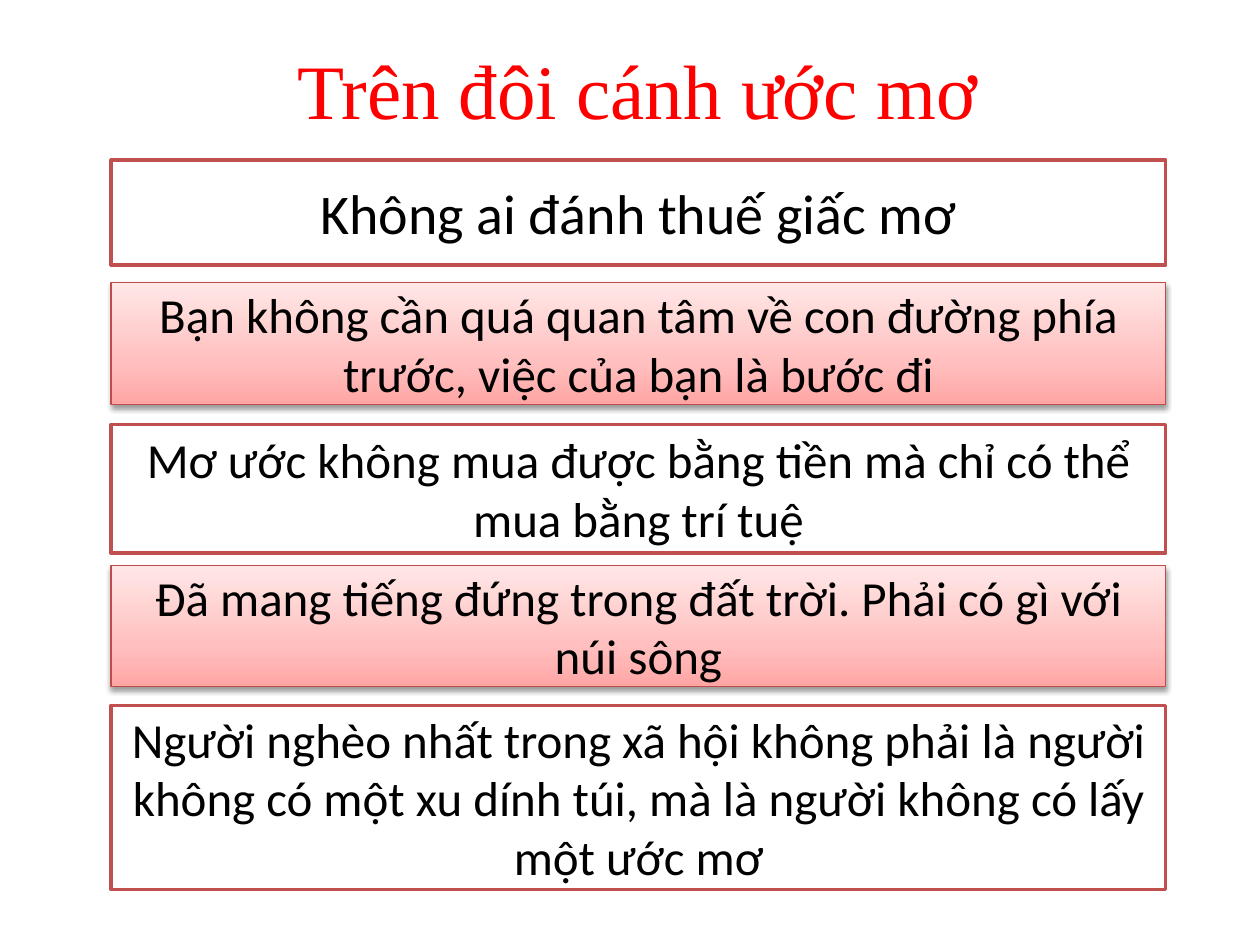
"""Build a slide of five sayings about dreams under a red heading."""
from lxml import etree
from pptx import Presentation
from pptx import util as u
from pptx.dml.color import RGBColor
from pptx.enum import shapes, text
from pptx.oxml.ns import qn

HUES = {"red": "FF0000", "ink": "000000", "white": "FFFFFF",
        "edge": "C0504D", "rim": "BF4C48",
        "deep": "FFA6A5", "mid": "FFC0BF", "pale": "FFE7E7"}


def write(shape, words, size=28, font="Calibri", hue="ink", wrap=True,
          fit=text.MSO_AUTO_SIZE.NONE, anchor=text.MSO_ANCHOR.MIDDLE):
    frame = shape.text_frame
    frame.text = words
    frame.word_wrap = wrap
    frame.auto_size = fit
    frame.vertical_anchor = anchor
    para = frame.paragraphs[0]
    para.alignment = text.PP_ALIGN.CENTER
    face = para.runs[0].font
    face.size, face.name = u.Pt(size), font
    face.color.rgb = RGBColor.from_string(HUES[hue])


def shade(shape):
    shape.fill.gradient()
    shape.fill.gradient_angle = 90
    stops = shape._element.spPr.find(".//" + qn("a:gsLst"))
    for stop in list(stops):
        stops.remove(stop)
    for hue, place in (("deep", 0), ("mid", 35), ("pale", 100)):
        stop = etree.SubElement(stops, qn("a:gs"), pos=str(place * 1000))
        etree.SubElement(stop, qn("a:srgbClr"), val=HUES[hue])
    glow = shape._element.spPr.find(qn("a:effectLst"))
    cast = etree.SubElement(glow, qn("a:outerShdw"), blurRad="40000",
                            dist="20000", dir="5400000", rotWithShape="0")
    tint = etree.SubElement(cast, qn("a:srgbClr"), val=HUES["ink"])
    etree.SubElement(tint, qn("a:alpha"), val="38000")


deck = Presentation()
deck.slide_width, deck.slide_height = u.Cm(25.4), u.Cm(19.05)
slide = deck.slides.add_slide(deck.slide_layouts[5])

head = slide.shapes.add_textbox(u.Cm(5.72), u.Cm(0.74), u.Cm(14.27), u.Cm(2.13))
write(head, "Trên đôi cánh ước mơ", size=44, font="Times New Roman", hue="red",
      wrap=False, fit=text.MSO_AUTO_SIZE.SHAPE_TO_FIT_TEXT,
      anchor=text.MSO_ANCHOR.TOP)

sayings = [
    (3.23, 2.11, "Không ai đánh thuế giấc mơ"),
    (5.69, 2.46, "Bạn không cần quá quan tâm về con đường phía trước, "
                 "việc của bạn là bước đi"),
    (8.56, 2.59, "Mơ ước không mua được bằng tiền mà chỉ có thể mua bằng trí tuệ"),
    (11.4, 2.44, "Đã mang tiếng đứng trong đất trời. Phải có gì với núi sông"),
    (14.22, 3.71, "Người nghèo nhất trong xã hội không phải là người không có "
                  "một xu dính túi, mà là người không có lấy một ước mơ"),
]
for rank, (top, high, words) in enumerate(sayings):
    spot = u.Cm(2.24), u.Cm(top), u.Cm(21.26), u.Cm(high)
    if rank == 0:
        box = slide.shapes.title
        box.left, box.top, box.width, box.height = spot
    else:
        box = slide.shapes.add_shape(shapes.MSO_SHAPE.RECTANGLE, *spot)
    box.shadow.inherit = False
    tinted = rank % 2 == 1
    if tinted:
        shade(box)
    else:
        box.fill.solid()
        box.fill.fore_color.rgb = RGBColor.from_string(HUES["white"])
    box.line.color.rgb = RGBColor.from_string(HUES["rim" if tinted else "edge"])
    box.line.width = u.Pt(0.75 if tinted else 2)
    write(box, words, size=28 if rank else 32)

deck.save("out.pptx")
